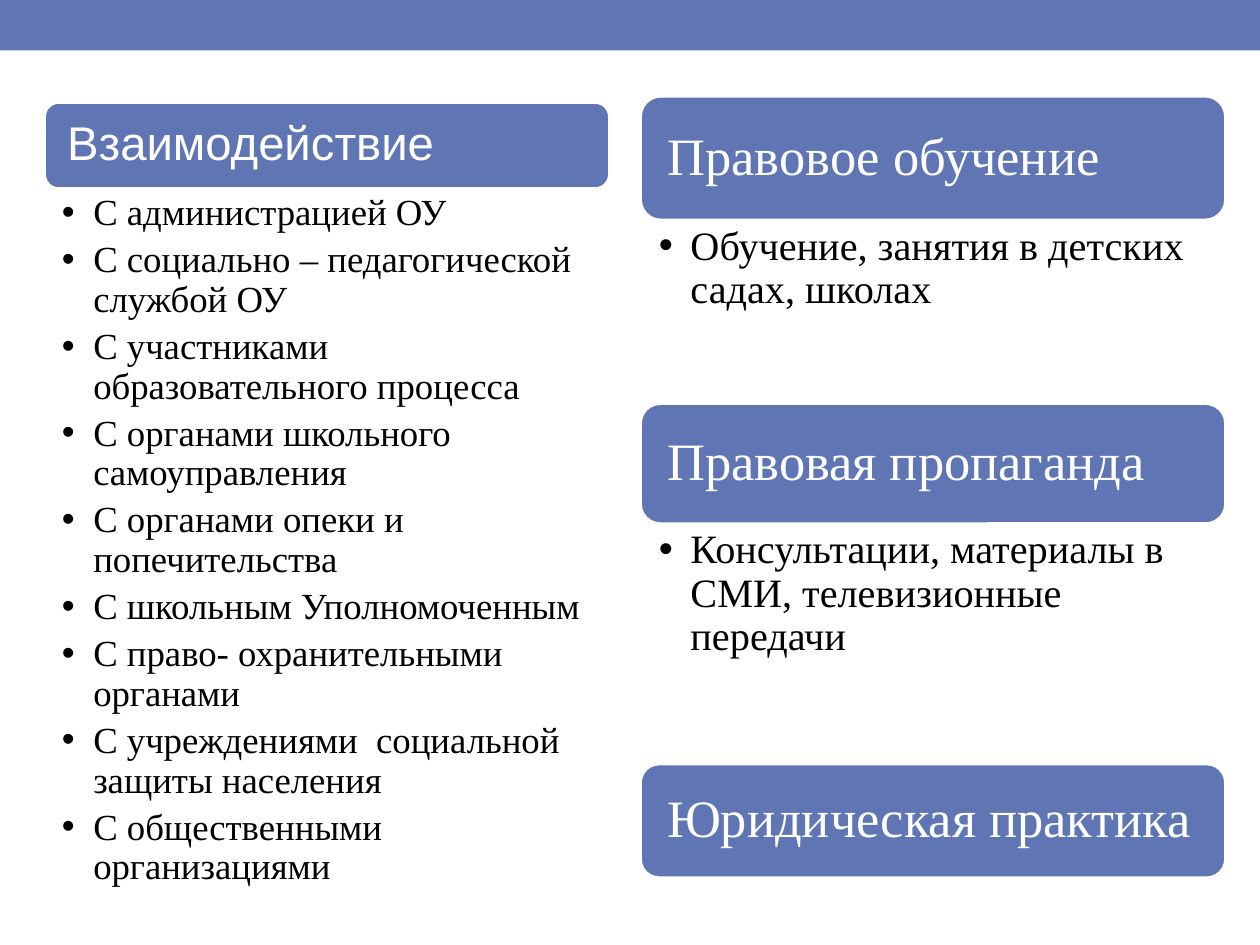
from lxml import etree
from pptx import Presentation
from pptx import util as u
from pptx.dml.color import RGBColor
from pptx.enum import shapes, text
from pptx.oxml.ns import qn

BLUE = RGBColor(0x60, 0x76, 0xB4)
WHITE = RGBColor(255, 255, 255)
BLACK = RGBColor(0, 0, 0)
SERIF = "Times New Roman"

WIDE, HIGH = 10, 7.5
BAR = 0.4

COLS = [
    dict(left=0.35, top=0.81, width=4.49, font="Arial", head=27, size=21,
         pad=0.15, inset=(0.14, 0.21), rows=[
             ("Взаимодействие", 0.69, 5.5, [
                 "С администрацией ОУ",
                 "С социально – педагогической службой ОУ",
                 "С участниками образовательного процесса",
                 "С органами школьного самоуправления",
                 "С органами опеки и попечительства",
                 "С школьным Уполномоченным",
                 "С право- охранительными органами",
                 "С учреждениями  социальной защиты населения",
                 "С общественными организациями"])]),
    dict(left=5.08, top=0.76, width=4.65, font=SERIF, head=30, size=23,
         pad=0.17, inset=(0.15, 0.23), rows=[
             ("Правовое обучение", 0.99, 1.45,
              ["Обучение, занятия в детских садах, школах"]),
             ("Правовая пропаганда", 0.96, 1.9,
              ["Консультации, материалы в СМИ, телевизионные передачи"]),
             ("Юридическая практика", 0.91, 0, [])]),
]


def block(slide, kind, *box):
    shape = slide.shapes.add_shape(kind, *map(u.Inches, box))
    shape.shadow.inherit = False
    shape.fill.solid()
    shape.fill.fore_color.rgb = BLUE
    return shape


def inset(frame, left, top, right, low):
    frame.margin_left, frame.margin_top = u.Inches(left), u.Inches(top)
    frame.margin_right, frame.margin_bottom = u.Inches(right), u.Inches(low)
    frame.word_wrap = True
    frame.auto_size = text.MSO_AUTO_SIZE.NONE


def style(para, font, size, color, after):
    para.alignment = text.PP_ALIGN.LEFT
    para.line_spacing = 0.9
    para.space_before = u.Pt(0)
    para.space_after = u.Pt(round(size * after, 1))
    for run in para.runs:
        run.font.name, run.font.size = font, u.Pt(size)
        run.font.bold = False
        run.font.color.rgb = color


def bullet(para):
    props = para._p.get_or_add_pPr()
    props.set("marL", str(u.Inches(0.25)))
    props.set("indent", str(-u.Inches(0.25)))
    etree.SubElement(props, qn("a:buFont")).set("typeface", "Arial")
    etree.SubElement(props, qn("a:buChar")).set("char", "•")


def header(slide, col, title, top, high):
    shape = block(slide, shapes.MSO_SHAPE.ROUNDED_RECTANGLE,
                  col["left"], top, col["width"], high)
    shape.line.color.rgb = WHITE
    shape.line.width = u.Pt(2.08)
    frame = shape.text_frame
    frame.text = title
    inset(frame, *[col["pad"]] * 4)
    frame.vertical_anchor = text.MSO_ANCHOR.MIDDLE
    style(frame.paragraphs[0], col["font"], col["head"], WHITE, 0.35)


def listing(body, col, items, top, high):
    body.left, body.top, body.width, body.height = map(
        u.Inches, (col["left"], top, col["width"], high))
    frame = body.text_frame
    frame.text = "\n".join(items)
    left, right = col["inset"]
    inset(frame, left, 0.04, right, 0.04)
    frame.vertical_anchor = text.MSO_ANCHOR.TOP
    for para in frame.paragraphs:
        style(para, SERIF, col["size"], BLACK, 0.2)
        bullet(para)


def main():
    deck = Presentation()
    deck.slide_width, deck.slide_height = u.Inches(WIDE), u.Inches(HIGH)
    slide = deck.slides.add_slide(deck.slide_layouts[4])
    title, *bodies = slide.placeholders
    bar = block(slide, shapes.MSO_SHAPE.RECTANGLE, 0, 0, WIDE, BAR)
    bar.line.fill.background()
    for col in COLS:
        top = col["top"]
        for name, high, room, items in col["rows"]:
            header(slide, col, name, top, high)
            if items:
                listing(bodies.pop(0), col, items, top + high, room)
            top += high + room
    for spare in (title, *bodies):
        spare.element.getparent().remove(spare.element)
    deck.save("out.pptx")


if __name__ == "__main__":
    main()
